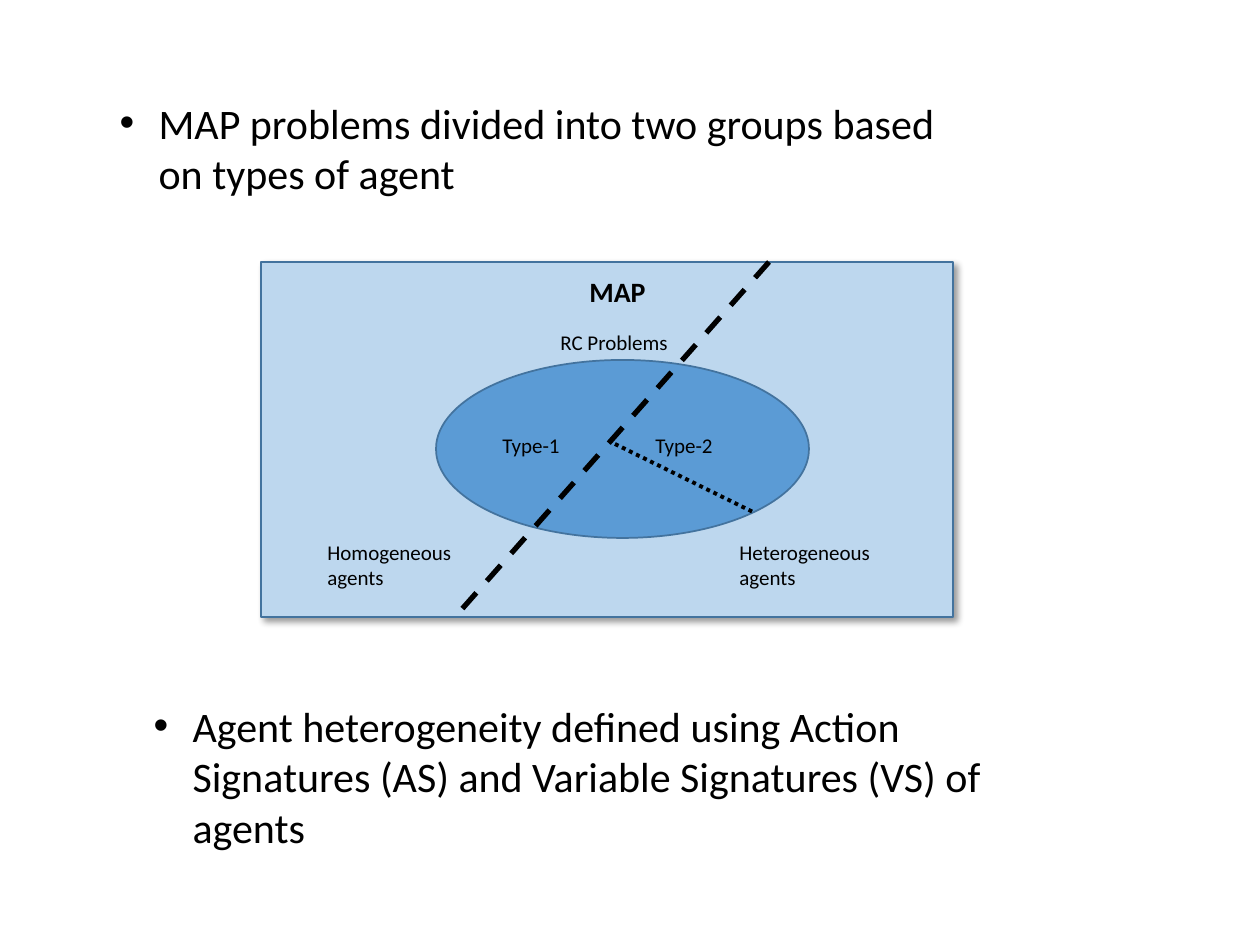
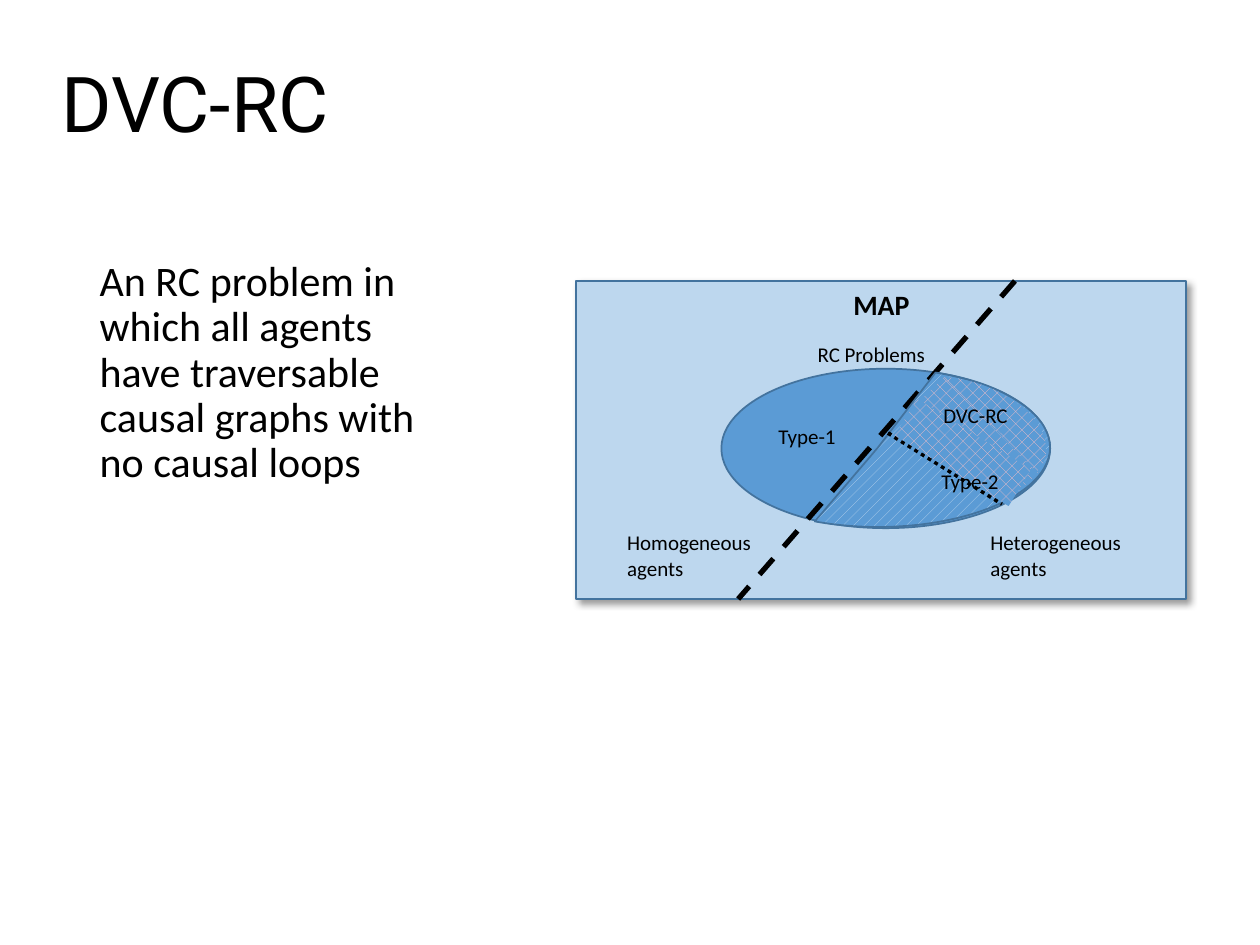
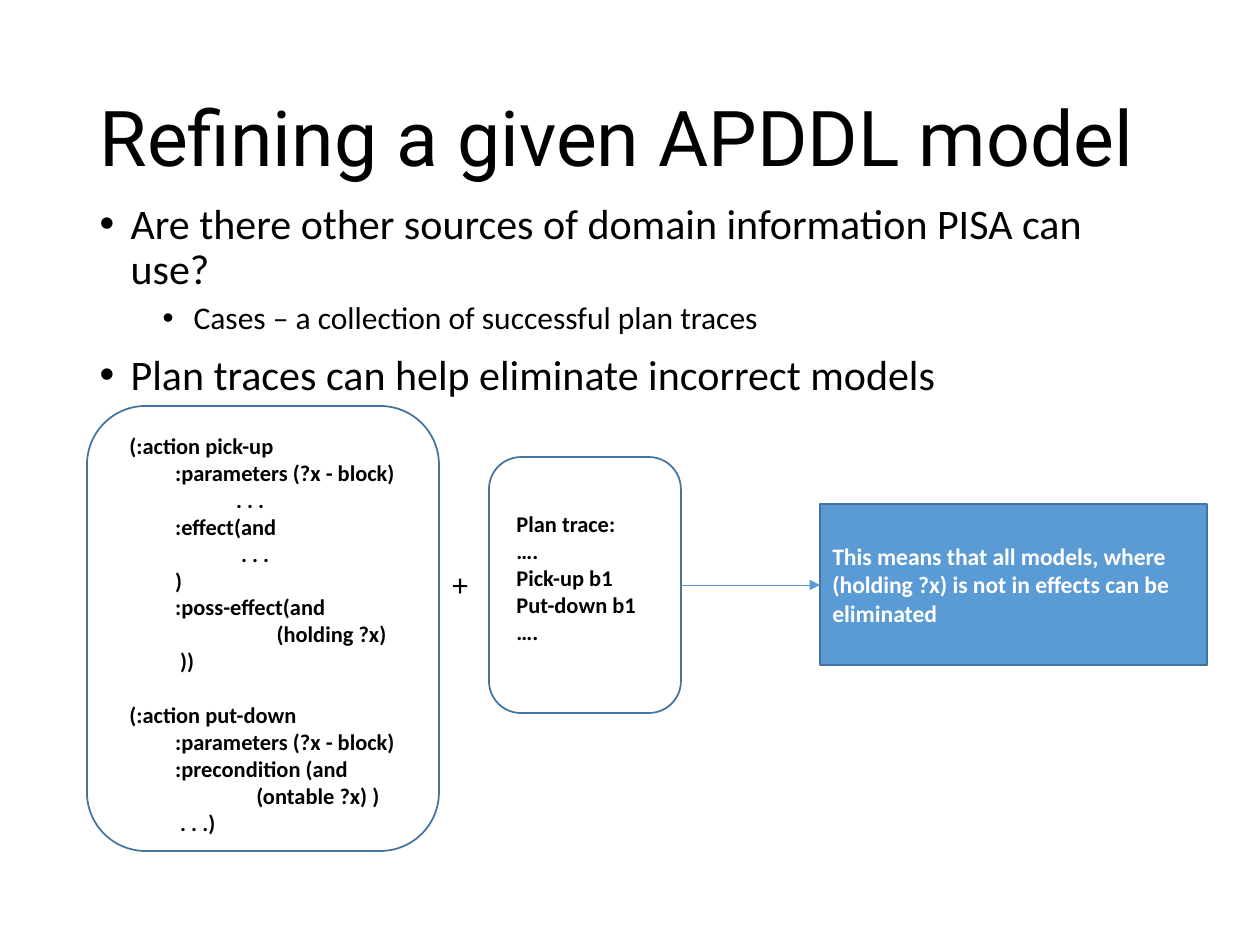
"""Build three slides on MAP problem classes and APDDL model refinement."""
from dataclasses import dataclass

from lxml import etree
from pptx import Presentation
from pptx import util as u
from pptx.dml.color import RGBColor
from pptx.enum import dml, shapes, text
from pptx.oxml.ns import qn

SHAPE = shapes.MSO_SHAPE
DASH = dml.MSO_LINE
PATTERN = dml.MSO_PATTERN
ALIGN = text.PP_ALIGN
ANCHOR = text.MSO_ANCHOR


@dataclass(frozen=True)
class Theme:
    """Colours, fonts and type sizes shared by the slides."""
    ink: str = "000000"
    paper: str = "FFFFFF"
    blue: str = "5B9BD5"
    pale: str = "BDD7EE"
    edge: str = "43739E"
    pink: str = "FFC1C5"
    head_font: str = "Roboto"
    body_font: str = "Calibri"
    title: float = 44
    body: float = 24
    sub: float = 18
    heading: float = 16
    note: float = 13.5
    code: float = 12.8
    label: float = 12


T = Theme()

ACTIONS = (
    """(:action pick-up
         :parameters (?x - block)
                     . . .
         :effect(and
                      . . .
         )
         :poss-effect(and
                             (holding ?x)
          ))""",
    """(:action put-down
         :parameters (?x - block)
         :precondition (and
                         (ontable ?x) )
          . . .)""",
)
TRACE = """Plan trace:
….
Pick-up b1
Put-down b1
…."""


def px(n):
    """Turn pixels into EMU."""
    return u.Emu(round(n * 914400 / 126))


def inside(box, x, y, w, h):
    """Shift a part's box by the corner of the box that holds it."""
    return box[0] + x, box[1] + y, w, h


def place(sp, box):
    """Move and size a shape."""
    sp.left, sp.top, sp.width, sp.height = map(px, box)


def add_xml(parent, tag, **attrs):
    """Append an element with attributes."""
    el = etree.SubElement(parent, qn(tag))
    for key, value in attrs.items():
        el.set(key, str(value))
    return el


def write(tf, content, size=T.label, font=T.body_font, color=T.ink, bold=False,
          align=ALIGN.LEFT, spacing=1.0, before=0, indent=None, hang=31, level=0):
    """Add one formatted paragraph to a text frame."""
    p = tf.add_paragraph() if tf.text else tf.paragraphs[0]
    p.alignment, p.line_spacing, p.level = align, spacing, level
    p.space_before = u.Pt(before)
    pPr = p._p.get_or_add_pPr()
    pPr.set("marL", str(px(indent or 0)))
    pPr.set("indent", str(px(-hang if indent else 0)))
    if indent:
        add_xml(pPr, "a:buFont", typeface="Arial")
        add_xml(pPr, "a:buChar", char="•")
    else:
        add_xml(pPr, "a:buNone")
    r = p.add_run()
    r.text = content
    f = r.font
    f.name, f.size, f.bold = font, u.Pt(size), bold
    f.color.rgb = RGBColor.from_string(color)


def text_box(parent, box, content, wrap=True, **fmt):
    """Add a text box with one paragraph per line."""
    tf = parent.add_textbox(*map(px, box)).text_frame
    tf.word_wrap = wrap
    for line in content.splitlines():
        write(tf, line, **fmt)
    return tf


def placeholder(sp, box, anchor):
    """Move a placeholder and return its text frame."""
    place(sp, box)
    tf = sp.text_frame
    tf.auto_size = text.MSO_AUTO_SIZE.NONE
    tf.word_wrap = True
    tf.vertical_anchor = anchor
    return tf


def title(s, box, content):
    """Fill the title placeholder."""
    tf = placeholder(s.shapes.title, box, ANCHOR.MIDDLE)
    write(tf, content, size=T.title, font=T.head_font, spacing=0.9)


def shape(parent, kind, box, fill=None, line=T.edge, pattern=None, back=T.blue,
          rot=0, flip=False, adjust=()):
    """Add a preset shape with a plain, patterned or empty fill."""
    sp = parent.add_shape(kind, *map(px, box))
    sp.shadow.inherit = False
    sp.rotation = rot
    if flip:
        sp._element.spPr.find(qn("a:xfrm")).set("flipH", "1")
    for i, value in enumerate(adjust):
        sp.adjustments[i] = value
    if pattern:
        sp.fill.patterned()
        sp.fill.pattern = pattern
        sp.fill.fore_color.rgb = RGBColor.from_string(fill)
        sp.fill.back_color.rgb = RGBColor.from_string(back)
    elif fill:
        sp.fill.solid()
        sp.fill.fore_color.rgb = RGBColor.from_string(fill)
    else:
        sp.fill.background()
    if line:
        sp.line.color.rgb = RGBColor.from_string(line)
        sp.line.width = u.Pt(1)
    else:
        sp.line.fill.background()
    return sp


def drop_shadow(sp):
    """Give a shape a soft shadow to the lower right."""
    effects = sp._element.spPr.find(qn("a:effectLst"))
    shadow = add_xml(effects, "a:outerShdw", blurRad=u.Pt(4), dist=u.Pt(3),
                     dir=45 * 60000, algn="tl", rotWithShape=0)
    add_xml(add_xml(shadow, "a:srgbClr", val=T.ink), "a:alpha", val=40000)


def line(parent, start, end, color=T.ink, width=3, dash=None, arrow=False):
    """Add a straight line, with an arrowhead at its end on request."""
    c = parent.add_connector(shapes.MSO_CONNECTOR.STRAIGHT, *map(px, (*start, *end)))
    c.line.color.rgb = RGBColor.from_string(color)
    c.line.width = u.Pt(width)
    if dash:
        c.line.dash_style = dash
    if arrow:
        add_xml(c.line._get_or_add_ln(), "a:tailEnd", type="triangle")
    add_xml(c._element.spPr, "a:effectLst")


def map_diagram(s, box, dx=0, rc_x=287, map_y=6):
    """Draw the MAP panel, laid out on a 692 by 355 grid and scaled to the box."""
    x0, y0, w, h = box
    sx, sy = w / 692, h / 355
    g = s.shapes.add_group_shape().shapes

    def part(x, y, pw, ph):
        """Scale a box from the grid to the panel."""
        return x0 + x * sx, y0 + y * sy, pw * sx, ph * sy

    drop_shadow(shape(g, SHAPE.FLOWCHART_PROCESS, box, T.pale))
    shape(g, SHAPE.OVAL, part(175 + dx, 98, 373, 178), T.blue)
    text_box(g, part(rc_x, 61, 294, 44), "RC Problems")
    for x, kind in ((466, "Heterogeneous"), (54, "Homogeneous")):
        text_box(g, part(x + dx, 271, 209, 73), f"{kind} agents")
    text_box(g, part(165 + dx, map_y, 383, 54), "MAP",
             size=T.heading, bold=True, align=ALIGN.CENTER)
    line(g, part(508 + dx, 0, 0, 0)[:2], part(194 + dx, 355, 0, 0)[:2], dash=DASH.DASH)


def labels(s, box, items):
    """Place small labels inside a panel."""
    for x, y, content in items:
        text_box(s.shapes, inside(box, x, y, 116, 38), content, wrap=False)


def type_border(s, box, start, end):
    """Draw the dotted border of the Type-2 region."""
    a, b = (inside(box, *point, 0, 0)[:2] for point in (start, end))
    line(s.shapes, a, b, width=2.25, dash=DASH.ROUND_DOT)


def dvc_region(s, box):
    """Hatch the DVC-RC part of the panel."""
    pink = dict(fill=T.pink, line=None, pattern=PATTERN.PERCENT_30)
    shape(s.shapes, SHAPE.FLOWCHART_PROCESS, inside(box, 334, 136, 134, 43), rot=45.4, **pink)
    shape(s.shapes, SHAPE.CHORD, inside(box, 331, 65, 107, 176), rot=286.6, flip=True,
          adjust=(47.87, 128.01), **pink)
    shape(s.shapes, SHAPE.FLOWCHART_PROCESS, inside(box, 320, 150, 134, 43), rot=31.8, **pink)


def groups_slide(prs):
    """Build the slide on the two groups of MAP problems."""
    s = prs.slides.add_slide(prs.slide_layouts[3])
    title_el = s.shapes.title._element
    title_el.getparent().remove(title_el)
    bullets = (
        ((107, 91, 878, 115), "MAP problems divided into two groups based on types of agent"),
        ((141, 694, 878, 165), "Agent heterogeneity defined using Action Signatures (AS) "
                               "and Variable Signatures (VS) of agents"),
    )
    for sp, (box, content) in zip(list(s.placeholders), bullets):
        write(placeholder(sp, box, ANCHOR.TOP), content, size=T.body, indent=39, hang=39)
    panel = (261, 262, 692, 355)
    map_diagram(s, panel)
    labels(s, panel, ((229, 164, "Type-1"), (382, 164, "Type-2")))
    type_border(s, panel, (354, 182), (492, 250))


def dvc_slide(prs):
    """Build the slide that defines DVC-RC."""
    s = prs.slides.add_slide(prs.slide_layouts[1])
    title(s, (49, 16, 1086, 183), "DVC-RC")
    tf = placeholder(s.placeholders[1], (87, 254, 360, 452), ANCHOR.TOP)
    write(tf, "An RC problem in which all agents have traversable causal graphs "
              "with no causal loops", size=T.body, spacing=0.9)
    panel = (576, 281, 610, 318)
    map_diagram(s, panel, dx=-10, rc_x=260, map_y=0)
    shape(s.shapes, SHAPE.PIE, inside(panel, 130, 87, 344, 159), T.pale,
          pattern=PATTERN.PERCENT_20, flip=True, adjust=(29.7, 139.46))
    type_border(s, panel, (312, 152), (426, 223))
    dvc_region(s, panel)
    labels(s, panel, ((190, 136, "Type-1"), (353, 181, "Type-2"), (355, 115, "DVC-RC")))


def refine_flow(s, box):
    """Draw the model, the plan trace and the conclusion they lead to."""
    tf = text_box(s.shapes, inside(box, 30, 20, 400, 426), ACTIONS[0],
                  size=T.code, bold=True)
    for i, row in enumerate(ACTIONS[1].splitlines()):
        write(tf, row, size=T.code, bold=True, before=0 if i else 15.6)
    text_box(s.shapes, inside(box, 417, 98, 200, 150), TRACE, size=T.code, bold=True)
    for frame in ((0, 0, 352, 445), (402, 51, 192, 256)):
        shape(s.shapes, SHAPE.ROUNDED_RECTANGLE, inside(box, *frame))
    result = shape(s.shapes, SHAPE.RECTANGLE, inside(box, 733, 98, 387, 161), T.blue)
    tf = result.text_frame
    tf.word_wrap = True
    tf.vertical_anchor = ANCHOR.MIDDLE
    write(tf, "This means that all models, where (holding ?x) is not in effects "
              "can be eliminated", size=T.note, color=T.paper, bold=True)
    line(s.shapes, inside(box, 594, 179, 0, 0)[:2], inside(box, 733, 179, 0, 0)[:2],
         color=T.blue, width=0.5, arrow=True)
    text_box(s.shapes, inside(box, 353, 153, 40, 50), "+", wrap=False, size=T.sub)


def refine_slide(prs):
    """Build the slide on refining a model with plan traces."""
    s = prs.slides.add_slide(prs.slide_layouts[1])
    title(s, (87, 50, 1086, 183), "Refining a given APDDL model")
    tf = placeholder(s.placeholders[1], (87, 197, 1086, 600), ANCHOR.TOP)
    write(tf, "Are there other sources of domain information PISA can use?",
          size=T.body, spacing=0.9, indent=31)
    write(tf, "Cases – a collection of successful plan traces",
          size=T.sub, spacing=0.9, before=5, indent=94, level=1)
    write(tf, "Plan traces can help eliminate incorrect models",
          size=T.body, spacing=0.9, before=10, indent=31)
    refine_flow(s, (87, 406, 1120, 445))


def main():
    """Build and save the presentation."""
    prs = Presentation()
    prs.slide_width, prs.slide_height = px(1260), px(945)
    for build in (groups_slide, dvc_slide, refine_slide):
        build(prs)
    prs.save("out.pptx")


if __name__ == "__main__":
    main()
